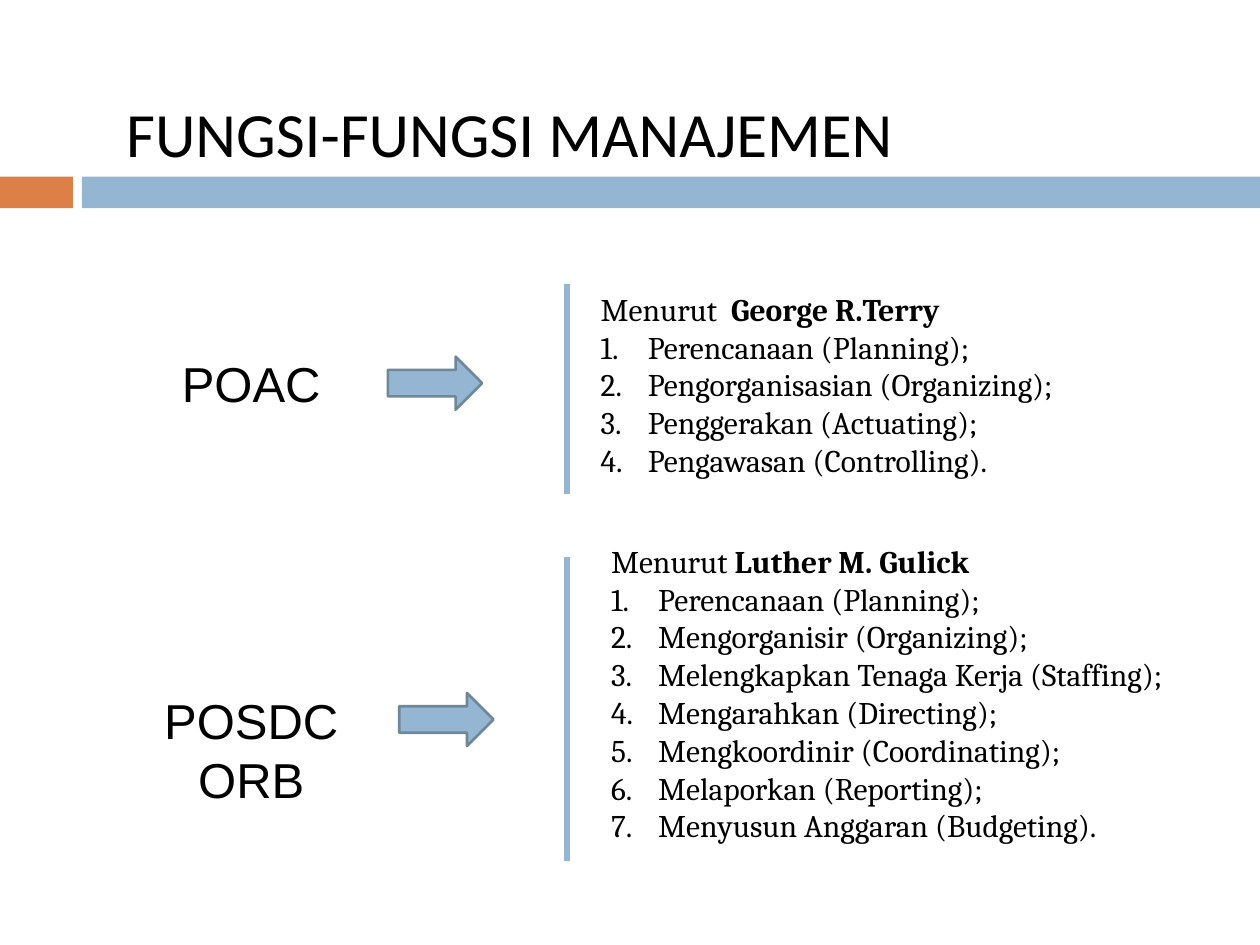
from pptx import Presentation
from pptx.util import Cm, Pt
from pptx.dml.color import RGBColor
from pptx.enum import shapes, text
from pptx.oxml import parse_xml
from pptx.oxml.ns import nsdecls

BLACK = RGBColor(0, 0, 0)
BLUE = RGBColor(0x94, 0xB6, 0xD2)
EDGE = RGBColor(0x6D, 0x87, 0x9B)
RUST = RGBColor(0xDD, 0x80, 0x47)

# Content; places in cm
TITLE = "FUNGSI-FUNGSI MANAJEMEN"
BANDS = [(0, 1.47, RUST), (1.65, 23.75, BLUE)]
GROUPS = [
    {"label": "POAC", "label_y": 7.01, "arrow": (7.82, 7.19),
     "rule": (5.72, 9.96), "list": (11.86, 5.72),
     "head": ("Menurut\u00a0 ", "George R.Terry"),
     "items": ["Perencanaan (Planning);", "Pengorganisasian (Organizing);",
               "Penggerakan (Actuating);", "Pengawasan (Controlling)."]},
    {"label": "POSDCORB", "label_y": 13.79, "arrow": (8.05, 13.97),
     "rule": (11.23, 17.35), "list": (12.07, 10.8),
     "head": ("Menurut ", "Luther M. Gulick"),
     "items": ["Perencanaan (Planning);", "Mengorganisir (Organizing);",
               "Melengkapkan Tenaga Kerja (Staffing);",
               "Mengarahkan (Directing);", "Mengkoordinir (Coordinating);",
               "Melaporkan (Reporting);", "Menyusun Anggaran (Budgeting)."]},
]
LABEL = {"name": "Arial", "size": Pt(28)}
BODY = {"name": "Cambria", "size": Pt(18)}
HEAD = {"name": "Calibri", "size": Pt(36)}
RULE_X, LINE_H, INDENT = 11.43, 0.76, 0.95

prs = Presentation()
prs.slide_width, prs.slide_height = Cm(25.4), Cm(19.05)
slide = prs.slides.add_slide(prs.slide_layouts[5])
parts = slide.shapes


def write(para, words, style, bold=False):
    run = para.add_run()
    run.text = words
    for key, val in {**style, "bold": bold}.items():
        setattr(run.font, key, val)
    run.font.color.rgb = BLACK


def block(kind, x, y, w, h, fill):
    shape = parts.add_shape(kind, Cm(x), Cm(y), Cm(w), Cm(h))
    shape.shadow.inherit = False
    shape.fill.solid()
    shape.fill.fore_color.rgb = fill
    shape.line.fill.background()
    return shape


def box(x, y, w, h):
    frame = parts.add_textbox(Cm(x), Cm(y), Cm(w), Cm(h)).text_frame
    frame.word_wrap = True
    return frame


def number(para):
    props = para._p.get_or_add_pPr()
    props.set("marL", str(Cm(INDENT)))
    props.set("indent", str(-Cm(INDENT)))
    props.append(parse_xml(f'<a:buFont {nsdecls("a")} typeface="+mj-lt"/>'))
    props.append(parse_xml(f'<a:buAutoNum {nsdecls("a")} type="arabicPeriod"/>'))


# Bands under the title
for x, w, fill in BANDS:
    block(shapes.MSO_SHAPE.RECTANGLE, x, 3.56, w, 0.64, fill)

# Title
title = parts.title
title.left, title.top, title.width, title.height = Cm(2.29), Cm(1.78), Cm(16.61), Cm(1.8)
frame = title.text_frame
frame.word_wrap = True
frame.auto_size = text.MSO_AUTO_SIZE.NONE
frame.vertical_anchor = text.MSO_ANCHOR.TOP
frame.paragraphs[0].alignment = text.PP_ALIGN.LEFT
write(frame.paragraphs[0], TITLE, HEAD)

# One row per theory: label, arrow, rule, numbered list
for group in GROUPS:
    para = box(2.74, group["label_y"], 4.65, 1.45).paragraphs[0]
    para.alignment = text.PP_ALIGN.CENTER
    write(para, group["label"], LABEL)

    arrow = block(shapes.MSO_SHAPE.RIGHT_ARROW, *group["arrow"], 1.9, 1.07, BLUE)
    arrow.line.color.rgb = EDGE
    arrow.line.width = Pt(1.5)

    top, end = group["rule"]
    rule = parts.add_connector(shapes.MSO_CONNECTOR.STRAIGHT,
                               Cm(RULE_X), Cm(top), Cm(RULE_X), Cm(end))
    rule.line.color.rgb = BLUE
    rule.line.width = Pt(3)
    rule._element.spPr.append(parse_xml(f'<a:effectLst {nsdecls("a")}/>'))

    items = group["items"]
    frame = box(*group["list"], 12.7, 0.25 + LINE_H * (len(items) + 1))
    lead, name = group["head"]
    write(frame.paragraphs[0], lead, BODY)
    write(frame.paragraphs[0], name, BODY, True)
    for item in items:
        para = frame.add_paragraph()
        number(para)
        write(para, item, BODY)

prs.save("out.pptx")
